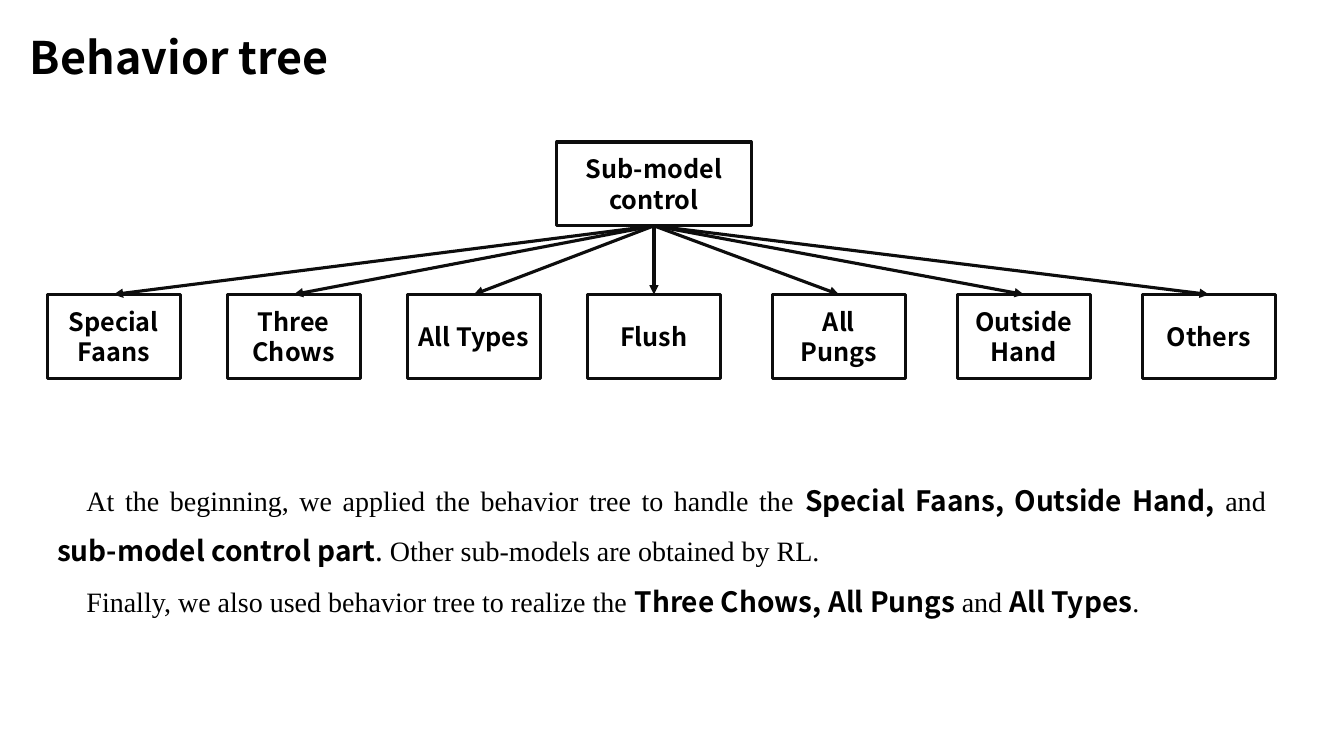
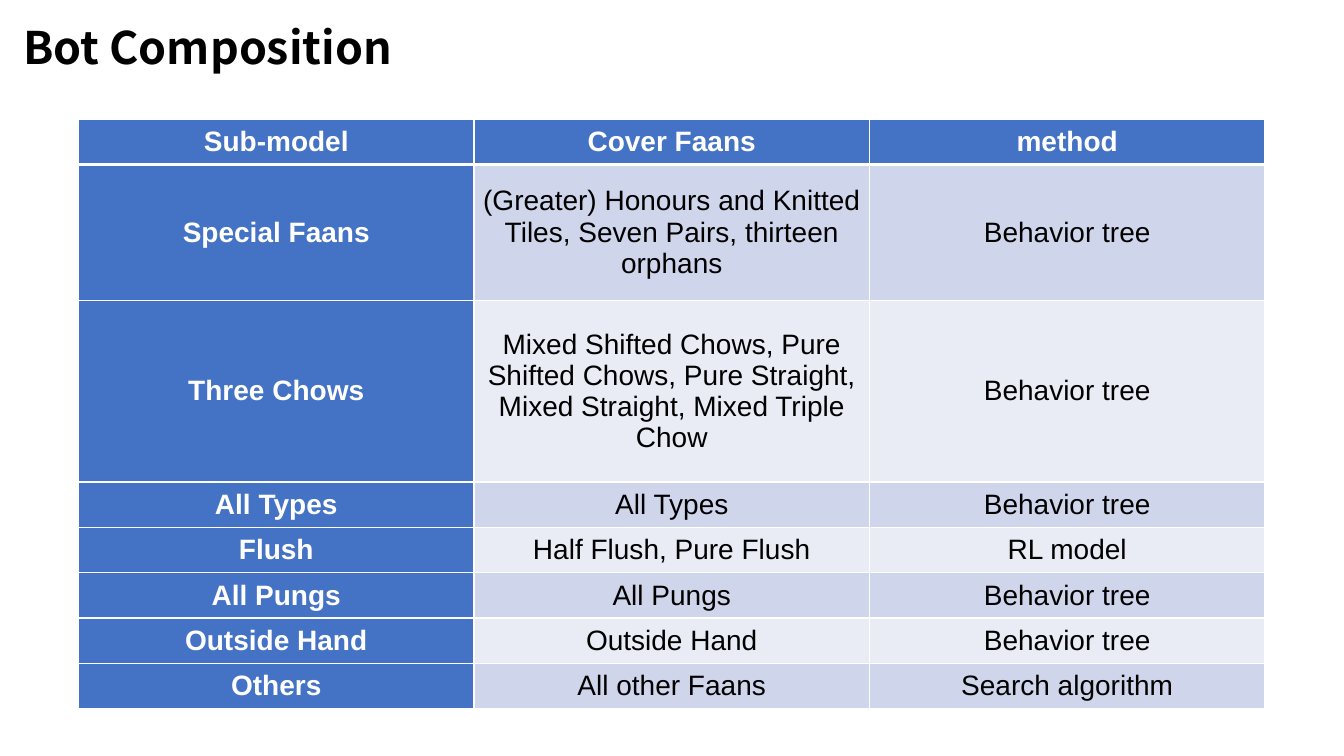
import pptx
import pptx.dml.color
import pptx.enum.shapes
import pptx.enum.text
import pptx.oxml
import pptx.oxml.ns
import pptx.util
from pptx.util import Cm

BLACK = pptx.dml.color.RGBColor(0x00, 0x00, 0x00)
WHITE = pptx.dml.color.RGBColor(0xFF, 0xFF, 0xFF)
INK = pptx.dml.color.RGBColor(0x0D, 0x0D, 0x0D)
BLUE = pptx.dml.color.RGBColor(0x44, 0x72, 0xC4)
BANDS = (
    pptx.dml.color.RGBColor(0xCF, 0xD5, 0xEA),
    pptx.dml.color.RGBColor(0xE9, 0xEB, 0xF5),
)

ALIGN = pptx.enum.text.PP_ALIGN
MIDDLE = pptx.enum.text.MSO_ANCHOR.MIDDLE
NO_FIT = pptx.enum.text.MSO_AUTO_SIZE.NONE
HEADING_FONT = "Noto Sans CJK SC"
BODY_FONT = "Times New Roman"

TITLE_FONT = {"name": HEADING_FONT, "size": pptx.util.Pt(32), "bold": True}
NODE_FONT = {"name": HEADING_FONT, "size": pptx.util.Pt(18), "bold": True}
PLAIN_FONT = {"name": BODY_FONT, "size": pptx.util.Pt(20), "bold": False}
STRONG_FONT = {"name": HEADING_FONT, "size": pptx.util.Pt(20), "bold": True}
STOP_FONT = {"name": HEADING_FONT, "size": pptx.util.Pt(20), "bold": False}
CELL_FONT = {"name": "Arial", "size": pptx.util.Pt(20)}
FRAME = {"word_wrap": True, "auto_size": NO_FIT, "vertical_anchor": MIDDLE}
CELL_FRAME = {
    "vertical_anchor": MIDDLE,
    "margin_left": Cm(0.18),
    "margin_right": Cm(0.18),
    "margin_top": 0,
    "margin_bottom": 0,
}
EDGE_WIDTH = pptx.util.Pt(2.25)

SUB_MODELS = [
    "Special Faans", "Three Chows", "All Types", "Flush",
    "All Pungs", "Outside Hand", "Others",
]
EXPLANATION = [
    [
        ("At the beginning, we applied the behavior tree to handle the ", PLAIN_FONT),
        ("Special Faans, Outside Hand, ", STRONG_FONT),
        ("and", PLAIN_FONT),
        (" sub-model control part", STRONG_FONT),
        (". ", STOP_FONT),
        ("Other sub-models are obtained by RL.", PLAIN_FONT),
    ],
    [
        ("Finally, we also used behavior tree to realize the ", PLAIN_FONT),
        ("Three Chows, All Pungs ", STRONG_FONT),
        ("and ", PLAIN_FONT),
        ("All Types", STRONG_FONT),
        (".", PLAIN_FONT),
    ],
]
HEADER = ("Sub-model", "Cover Faans", "method")
COVERAGE = [
    ("(Greater) Honours and Knitted Tiles, Seven Pairs, thirteen orphans", "Behavior tree"),
    ("Mixed Shifted Chows, Pure Shifted Chows, Pure Straight, "
     "Mixed Straight, Mixed Triple Chow", "Behavior tree"),
    ("All Types", "Behavior tree"),
    ("Half Flush, Pure Flush", "RL model"),
    ("All Pungs", "Behavior tree"),
    ("Outside Hand", "Behavior tree"),
    ("All other Faans", "Search algorithm"),
]
ROW_UNITS = (1, 3, 4, 1, 1, 1, 1, 1)


def apply(target, values):
    for attribute, value in values.items():
        setattr(target, attribute, value)


def add_run(paragraph, text, font_values, colour=BLACK):
    run = paragraph.add_run()
    run.text = text
    apply(run.font, font_values)
    run.font.color.rgb = colour


def add_titled_slide(deck, text, left, top):
    slide = deck.slides.add_slide(deck.slide_layouts[5])
    title = slide.shapes.title
    apply(title, {"left": left, "top": top, "width": Cm(10.9), "height": Cm(2.54)})
    apply(title.text_frame, FRAME)
    paragraph = title.text_frame.paragraphs[0]
    apply(paragraph, {"alignment": ALIGN.LEFT, "line_spacing": 0.9})
    add_run(paragraph, text, TITLE_FONT)
    return slide


def add_node(slide, text, left, top, width, height):
    node = slide.shapes.add_shape(
        pptx.enum.shapes.MSO_SHAPE.RECTANGLE, int(left), int(top), width, height)
    node.shadow.inherit = False
    node.fill.solid()
    node.fill.fore_color.rgb = WHITE
    node.line.color.rgb = INK
    node.line.width = EDGE_WIDTH
    apply(node.text_frame, FRAME)
    paragraph = node.text_frame.paragraphs[0]
    paragraph.alignment = ALIGN.CENTER
    add_run(paragraph, text, NODE_FONT)
    return node


def add_branch(slide, parent, child):
    branch = slide.shapes.add_connector(
        pptx.enum.shapes.MSO_CONNECTOR.STRAIGHT, 0, 0, 0, 0)
    branch.begin_connect(parent, 2)
    branch.end_connect(child, 0)
    branch.line.color.rgb = INK
    branch.line.width = EDGE_WIDTH
    arrowhead = pptx.oxml.parse_xml(
        f'<a:tailEnd {pptx.oxml.ns.nsdecls("a")} type="triangle"/>')
    branch.line._get_or_add_ln().append(arrowhead)
    branch._element.spPr.append(
        pptx.oxml.parse_xml(f'<a:effectLst {pptx.oxml.ns.nsdecls("a")}/>'))


def add_tree(slide, left, top, width, height):
    root_width, leaf_width, node_height = Cm(4.9), Cm(3.35), Cm(2.11)
    axis = Cm(15.29)
    middle = len(SUB_MODELS) // 2
    left_pitch = (axis - leaf_width / 2) / middle
    right_pitch = (width - axis - leaf_width / 2) / middle
    root = add_node(slide, "Sub-model control", left + axis - root_width / 2, top,
                    root_width, node_height)
    leaves = []
    for position, name in enumerate(SUB_MODELS):
        step = position - middle
        pitch = left_pitch if step < 0 else right_pitch
        leaves.append(add_node(
            slide, name, left + axis - leaf_width / 2 + step * pitch,
            top + height - node_height, leaf_width, node_height))
    for leaf in leaves:
        add_branch(slide, root, leaf)


def add_explanation(slide, left, top, width, height):
    explanation = slide.shapes.add_textbox(left, top, width, height).text_frame
    explanation.word_wrap = True
    for index, parts in enumerate(EXPLANATION):
        paragraph = explanation.add_paragraph() if index else explanation.paragraphs[0]
        apply(paragraph, {"alignment": ALIGN.JUSTIFY, "line_spacing": 1.5})
        paragraph._p.get_or_add_pPr().set("indent", str(Cm(0.74)))
        for text, font_values in parts:
            add_run(paragraph, text, font_values)


def add_borders(cell, points):
    properties = cell._tc.get_or_add_tcPr()
    for side in ("L", "R", "T", "B"):
        width = pptx.util.Pt(points.get(side, 1))
        properties.append(pptx.oxml.parse_xml(
            f'<a:ln{side} {pptx.oxml.ns.nsdecls("a")} w="{width}"><a:solidFill>'
            f'<a:srgbClr val="{WHITE}"/></a:solidFill></a:ln{side}>'))


def format_cell(cell, text, row, column):
    heading = row == 0 or column == 0
    add_borders(cell, {0: {"B": 3}, 1: {"T": 3}}.get(row, {}))
    cell.fill.solid()
    cell.fill.fore_color.rgb = BLUE if heading else BANDS[(row - 1) % 2]
    apply(cell, CELL_FRAME)
    paragraph = cell.text_frame.paragraphs[0]
    paragraph.alignment = ALIGN.CENTER
    add_run(paragraph, text, {**CELL_FONT, "bold": heading}, WHITE if heading else BLACK)


def add_composition(slide, left, top, width, height):
    rows = [HEADER] + [(name, *cover) for name, cover in zip(SUB_MODELS, COVERAGE)]
    composition = slide.shapes.add_table(
        len(rows), len(HEADER), left, top, width, height).table
    for column in composition.columns:
        column.width = width // len(HEADER)
    for row, units in zip(composition.rows, ROW_UNITS):
        row.height = height * units // sum(ROW_UNITS)
    for row, texts in enumerate(rows):
        for column, text in enumerate(texts):
            format_cell(composition.cell(row, column), text, row, column)


def build_behavior_tree(deck):
    slide = add_titled_slide(deck, "Behavior tree", Cm(0.5), Cm(0.25))
    add_tree(slide, Cm(1.19), Cm(3.58), Cm(30.95), Cm(5.95))
    add_explanation(slide, Cm(1.19), Cm(11.63), Cm(30.96), Cm(3.96))


def build_bot_composition(deck):
    slide = add_titled_slide(deck, "Bot Composition", Cm(0.33), Cm(0))
    add_composition(slide, Cm(1.98), Cm(3), Cm(29.9), Cm(14.86))


def main():
    deck = pptx.Presentation()
    apply(deck, {"slide_width": Cm(33.87), "slide_height": Cm(19.05)})
    build_behavior_tree(deck)
    build_bot_composition(deck)
    deck.save("out.pptx")


if __name__ == "__main__":
    main()
